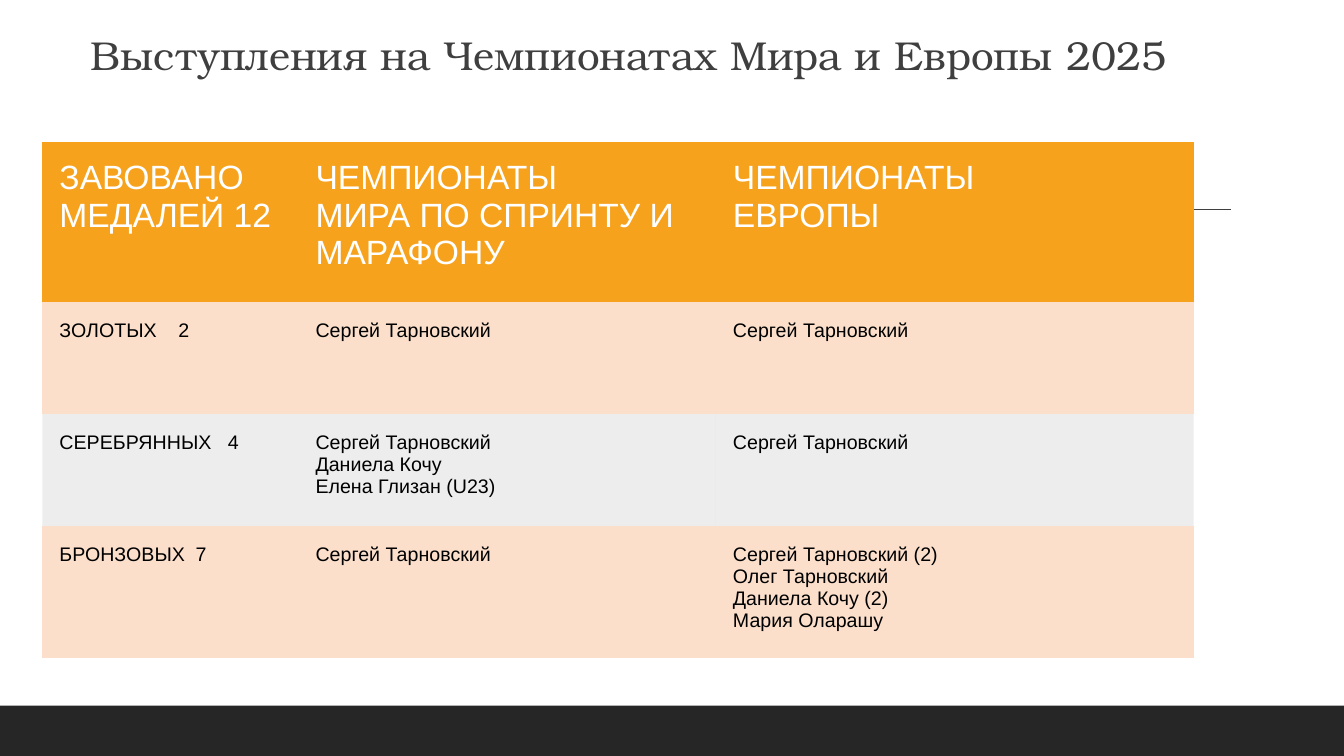
from lxml.etree import SubElement
from pptx import Presentation
from pptx.dml.color import RGBColor
from pptx.enum.shapes import MSO_CONNECTOR, MSO_SHAPE
from pptx.enum.text import MSO_ANCHOR, PP_ALIGN
from pptx.oxml.ns import qn
from pptx.util import Emu, Pt

PX = 9144
WHITE = RGBColor(0xFF, 0xFF, 0xFF)
BLACK = RGBColor(0x00, 0x00, 0x00)
CHARCOAL = RGBColor(0x26, 0x26, 0x26)
GREY = RGBColor(0x3F, 0x3F, 0x3F)
ORANGE = RGBColor(0xF6, 0xA2, 0x1D)
PEACH = RGBColor(0xFB, 0xDF, 0xCB)
PLAIN_STYLE = "{2D5ABB26-0587-4C30-8999-92F81FD0307C}"

COLUMN_WIDTHS = [254, 414, 336, 138]
ROW_HEIGHTS = [159, 111, 111, 131]
ROW_FILLS = [(ORANGE, 100), (PEACH, 100), (BLACK, 7), (PEACH, 100)]
COUNT_TABS = [None, 118, 167, 135]
MEDALS = [
    ["ЗАВОВАНО МЕДАЛЕЙ 12", "ЧЕМПИОНАТЫ\nМИРА ПО СПРИНТУ И МАРАФОНУ", "ЧЕМПИОНАТЫ ЕВРОПЫ"],
    ["ЗОЛОТЫХ\t2", "Сергей Тарновский", "Сергей Тарновский"],
    ["СЕРЕБРЯННЫХ\t4", "Сергей Тарновский\nДаниела Кочу\nЕлена Глизан (U23)", "Сергей Тарновский"],
    ["БРОНЗОВЫХ\t7", "Сергей Тарновский",
     "Сергей Тарновский (2)\nОлег Тарновский\nДаниела Кочу (2)\nМария Оларашу"],
]


def px(length):
    return Emu(length * PX)


def write_text(frame, text, size, color, font="Arial", align=PP_ALIGN.LEFT, spacing=None, tab=None):
    frame.word_wrap = True
    for index, line in enumerate(text.split("\n")):
        para = frame.add_paragraph() if index else frame.paragraphs[0]
        para.alignment = align
        para.line_spacing = spacing
        if tab:
            tabs = SubElement(para._p.get_or_add_pPr(), qn("a:tabLst"))
            SubElement(tabs, qn("a:tab"), pos=str(px(tab)), algn="l")
        span = para.add_run()
        span.text = line
        span.font.name = font
        span.font.size = Pt(size)
        span.font.bold = False
        span.font.color.rgb = color


def add_bar(page, left, top, width, height, color):
    bar = page.shapes.add_shape(MSO_SHAPE.RECTANGLE, px(left), px(top), px(width), px(height))
    bar.shadow.inherit = False
    bar.fill.solid()
    bar.fill.fore_color.rgb = color
    bar.line.fill.background()


def add_rule(page, left, right, top, color):
    rule = page.shapes.add_connector(MSO_CONNECTOR.STRAIGHT, px(left), px(top), px(right), px(top))
    rule.line.color.rgb = color
    rule.line.width = Pt(1)
    SubElement(rule._element.spPr, qn("a:effectLst"))


def add_title(page, text, left, top, width, height):
    box = page.shapes.add_textbox(px(left), px(top), px(width), px(height))
    box.text_frame.vertical_anchor = MSO_ANCHOR.BOTTOM
    write_text(box.text_frame, text, 28.8, GREY, font="TeX Gyre Bonum",
               align=PP_ALIGN.CENTER, spacing=0.9)


def fill_cell(cell, color, opacity):
    cell.fill.solid()
    cell.fill.fore_color.rgb = color
    if opacity < 100:
        tint = cell._tc.tcPr.find(qn("a:solidFill")).find(qn("a:srgbClr"))
        SubElement(tint, qn("a:alpha"), val=str(opacity * 1000))


def add_medal_table(page, left, top):
    frame = page.shapes.add_table(len(ROW_HEIGHTS), len(COLUMN_WIDTHS), px(left), px(top),
                                  px(sum(COLUMN_WIDTHS)), px(sum(ROW_HEIGHTS)))
    table = frame.table
    table.horz_banding = False
    table._tbl.tblPr.find(qn("a:tableStyleId")).text = PLAIN_STYLE
    for column, width in zip(table.columns, COLUMN_WIDTHS):
        column.width = px(width)
    for index, row in enumerate(table.rows):
        row.height = px(ROW_HEIGHTS[index])
        size, color = (14, BLACK) if index else (24, WHITE)
        for cell in row.cells:
            cell.margin_left = cell.margin_right = px(17)
            cell.margin_top = cell.margin_bottom = px(17)
            fill_cell(cell, *ROW_FILLS[index])
        for cell, text in zip(row.cells, MEDALS[index]):
            tab = COUNT_TABS[index] if "\t" in text else None
            write_text(cell.text_frame, text, size, color, tab=tab)


def main():
    deck = Presentation()
    deck.slide_width, deck.slide_height = px(1333), px(750)
    page = deck.slides.add_slide(deck.slide_layouts[6])
    add_bar(page, 0, 700, 1333, 50, CHARCOAL)
    add_rule(page, 131, 1221, 208, GREY)
    add_title(page, "Выступления на Чемпионатах Мира и Европы 2025", 27, 31, 1193, 53)
    add_medal_table(page, 42, 141)
    deck.save("out.pptx")


if __name__ == "__main__":
    main()
